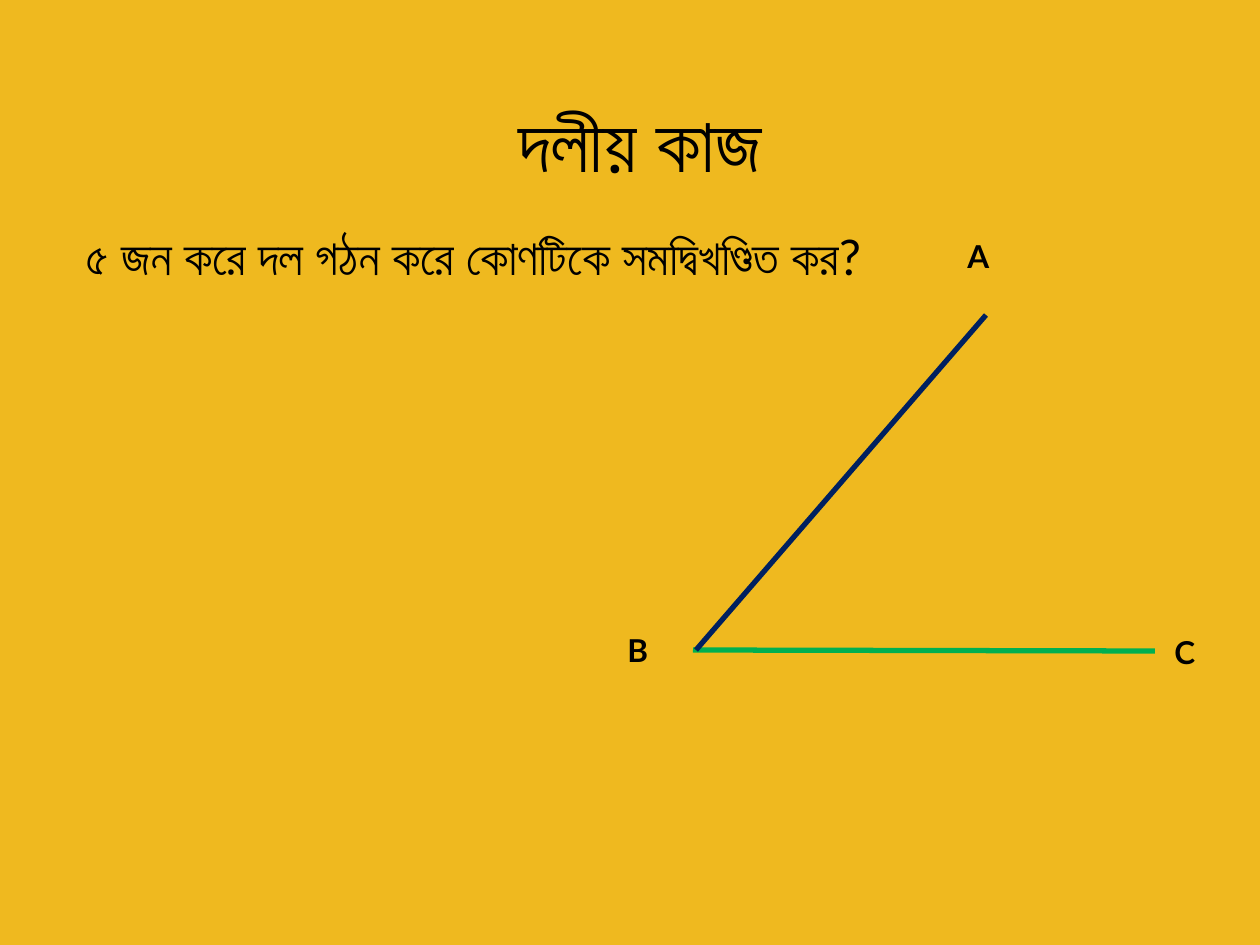
from lxml.etree import SubElement
from pptx import Presentation
from pptx.dml.color import RGBColor
from pptx.enum.shapes import MSO_CONNECTOR
from pptx.enum.text import MSO_ANCHOR, MSO_AUTO_SIZE, PP_ALIGN
from pptx.oxml.ns import qn
from pptx.util import Emu, Pt

SCALE = 914400 / 126
COLOURS = {"background": "EFB91F", "text": "000000", "base": "00B050", "arm": "002060"}
TITLE_FORMAT = {"name": "Lato", "size": Pt(44), "bold": False}
TASK_FORMAT = {"name": "Lato", "size": Pt(28), "bold": False}
LABEL_FORMAT = {"name": "Lato", "size": Pt(18), "bold": True}


def px(*lengths):
    """Turn pixel lengths into EMU."""
    return [Emu(round(length * SCALE)) for length in lengths]


def colour(name):
    """Look up a named colour."""
    return RGBColor.from_string(COLOURS[name])


def write_text(shape, text, font_format):
    """Write one formatted paragraph into a shape and return it."""
    shape.text_frame.word_wrap = True
    para = shape.text_frame.paragraphs[0]
    span = para.add_run()
    span.text = text
    for attribute, value in font_format.items():
        setattr(span.font, attribute, value)
    span.font.color.rgb = colour("text")
    return para


def add_title(page, box, text):
    """Place the centred slide title."""
    title = page.shapes.title
    title.left, title.top, title.width, title.height = px(*box)
    title.text_frame.vertical_anchor = MSO_ANCHOR.MIDDLE
    write_text(title, text, TITLE_FORMAT).alignment = PP_ALIGN.CENTER


def add_task(page, box, text):
    """Place the group task."""
    write_text(page.shapes.add_textbox(*px(*box)), text, TASK_FORMAT)


def add_ray(page, start, end, colour_name):
    """Draw one side of the angle."""
    ray = page.shapes.add_connector(MSO_CONNECTOR.STRAIGHT, *px(*start, *end))
    ray.line.color.rgb = colour(colour_name)
    ray.line.width = Pt(3)
    SubElement(ray._element.spPr, qn("a:effectLst"))


def add_angle(page, box):
    """Draw the angle ABC with its labels inside a box."""
    left, top, width, height = box
    label_width, label_height = 73, 50
    baseline = top + height - 27
    add_ray(page, (left + 78, baseline), (left + 540, baseline + 1), "base")
    add_ray(page, (left + 81, baseline), (left + 371, top + 84), "arm")
    labels = {
        "A": (left + 340, top),
        "B": (left, top + height - label_height - 2),
        "C": (left + width - label_width, top + height - label_height),
    }
    for letter, corner in labels.items():
        label = page.shapes.add_textbox(*px(*corner, label_width, label_height))
        write_text(label, letter, LABEL_FORMAT)
        label.text_frame.auto_size = MSO_AUTO_SIZE.SHAPE_TO_FIT_TEXT


def main():
    """Build and save the slide."""
    deck = Presentation()
    deck.slide_width, deck.slide_height = px(1260, 945)
    page = deck.slides.add_slide(deck.slide_layouts[5])
    page.background.fill.solid()
    page.background.fill.fore_color.rgb = colour("background")
    add_title(page, (73, 63, 1134, 157), "দলীয় কাজ")
    add_task(page, (73, 220, 1134, 624), "৫ জন করে দল গঠন করে কোণটিকে সমদ্বিখণ্ডিত কর?")
    add_angle(page, (615, 231, 620, 446))
    deck.save("out.pptx")


if __name__ == "__main__":
    main()
